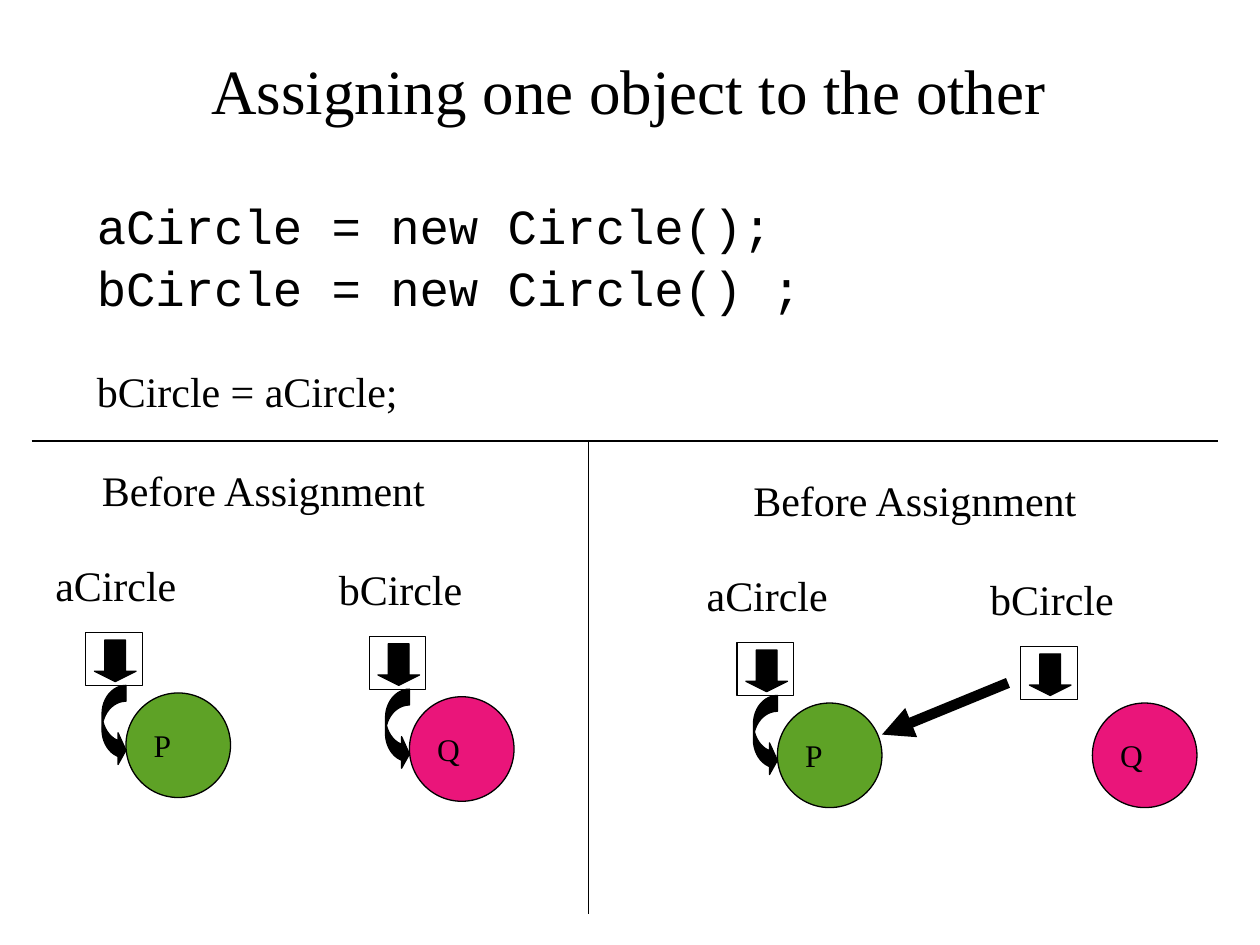
import pptx
import pptx.util
import pptx.dml.color
import pptx.enum.shapes
import pptx.enum.text
import pptx.oxml.ns
import lxml.etree

Inches, Pt = pptx.util.Inches, pptx.util.Pt
KIND = pptx.enum.shapes.MSO_SHAPE
ALIGN = pptx.enum.text.PP_ALIGN
ANCHOR = pptx.enum.text.MSO_ANCHOR

WIDE, HIGH = 10, 7.5
INK = {"black": "000000", "white": "FFFFFF", "green": "5EA226", "pink": "EA157A"}
SERIF, MONO = "Times New Roman", "Courier New"

TITLE = "Assigning one object to the other"
# text, font, size, space before in points
CODE = [
    ("aCircle = new Circle();", MONO, 28, 0),
    ("bCircle = new Circle() ;", MONO, 28, 2),
    ("bCircle = aCircle;", SERIF, 24, 28),
]
# name, label width, letter, colour
VARS = [("aCircle", 1.18, "P", "green"), ("bCircle", 1.19, "Q", "pink")]
# left and top of the first box, then the ball offset and curve of each variable
NEAR, FAR = (0.32, 0.48), (0.57, 0.45)
PANELS = [
    ("Before Assignment", 0.68, 5.02, [(NEAR, True), (NEAR, True)]),
    ("Before Assignment", 5.85, 5.10, [(NEAR, True), (FAR, False)]),
]
STEP = (2.25, 0.03)  # from one variable to the next
BALL = 0.83
# from, to, width, arrowhead
LINES = [
    ((8, 5.42), (7, 5.83), 6, True),
    ((4.67, 3.5), (4.67, 7.25), 0.75, False),
    ((0.25, 3.5), (9.67, 3.5), 0.75, False),
]


def tint(name):
    return pptx.dml.color.RGBColor.from_string(INK[name])


def write(para, text, size, font=SERIF):
    run = para.add_run()
    run.text = text
    run.font.size = Pt(size)
    run.font.name = font
    run.font.color.rgb = tint("black")


def label(host, text, x, y, w):
    box = host.add_textbox(Inches(x), Inches(y), Inches(w), Inches(0.5))
    box.text_frame.word_wrap = False
    write(box.text_frame.paragraphs[0], text, 24)


def draw(host, kind, fill, x, y, w, h):
    shape = host.add_shape(kind, Inches(x), Inches(y), Inches(w), Inches(h))
    shape.shadow.inherit = False
    shape.fill.solid()
    shape.fill.fore_color.rgb = tint(fill)
    shape.line.color.rgb = tint("black")
    shape.line.width = Pt(0.75)
    return shape


def show(host, var, x, y, shift, curved):
    """Draw a named box with its pointer and the circle it refers to."""
    name, wide, letter, fill = var
    draw(host, KIND.RECTANGLE, "white", x, y, 0.45, 0.42)
    if curved:
        curve = draw(host, KIND.CURVED_RIGHT_ARROW, "black", x + 0.13, y + 0.42, 0.19, 0.64)
        for i, ratio in enumerate((0.66, 1.32, 0.33)):
            curve.adjustments[i] = ratio
    ball = draw(host, KIND.OVAL, fill, x + shift[0], y + shift[1], BALL, BALL)
    frame = ball.text_frame
    frame.word_wrap = False
    frame.vertical_anchor = ANCHOR.MIDDLE
    frame.paragraphs[0].alignment = ALIGN.LEFT
    write(frame.paragraphs[0], letter, 18)
    arrow = draw(host, KIND.DOWN_ARROW, "black", x + 0.07, y + 0.06, 0.33, 0.33)
    arrow.adjustments[0], arrow.adjustments[1] = 0.5, 0.25
    label(host, name, x - 0.34, y - 0.63, wide)


def link(host, start, end, width, head):
    line = host.add_connector(pptx.enum.shapes.MSO_CONNECTOR.STRAIGHT,
                              *[Inches(v) for v in start + end])
    line.line.color.rgb = tint("black")
    line.line.width = Pt(width)
    qn = pptx.oxml.ns.qn
    if head:
        lxml.etree.SubElement(line.line._get_or_add_ln(), qn("a:tailEnd"), type="triangle")
    lxml.etree.SubElement(line._element.spPr, qn("a:effectLst"))


def main():
    deck = pptx.Presentation()
    deck.slide_width, deck.slide_height = Inches(WIDE), Inches(HIGH)
    slide = deck.slides.add_slide(deck.slide_layouts[5])
    shapes = slide.shapes

    title = shapes.title
    title.left, title.top = Inches(0.18), Inches(0.17)
    title.width, title.height = Inches(9.62), Inches(1.08)
    title.text_frame.vertical_anchor = ANCHOR.MIDDLE
    title.text_frame.paragraphs[0].alignment = ALIGN.CENTER
    write(title.text_frame.paragraphs[0], TITLE, 36)

    for head, x, y, links in PANELS:
        for i, (var, (shift, curved)) in enumerate(zip(VARS, links)):
            host = shapes.add_group_shape().shapes if i == 0 else shapes
            show(host, var, x + i * STEP[0], y + i * STEP[1], shift, curved)
        label(shapes, head, x + 0.03, y - 1.38, 2.95)

    for line in LINES:
        link(shapes, *line)

    code = shapes.add_textbox(Inches(0.67), Inches(1.42), Inches(8.14), Inches(1.85))
    code.line.color.rgb = tint("white")
    code.line.width = Pt(0.75)
    frame = code.text_frame
    frame.word_wrap = True
    frame.margin_top = Inches(0.13)
    for i, (text, font, size, gap) in enumerate(CODE):
        para = frame.add_paragraph() if i else frame.paragraphs[0]
        para.space_before = Pt(gap)
        write(para, text, size, font)

    deck.save("out.pptx")


if __name__ == "__main__":
    main()
